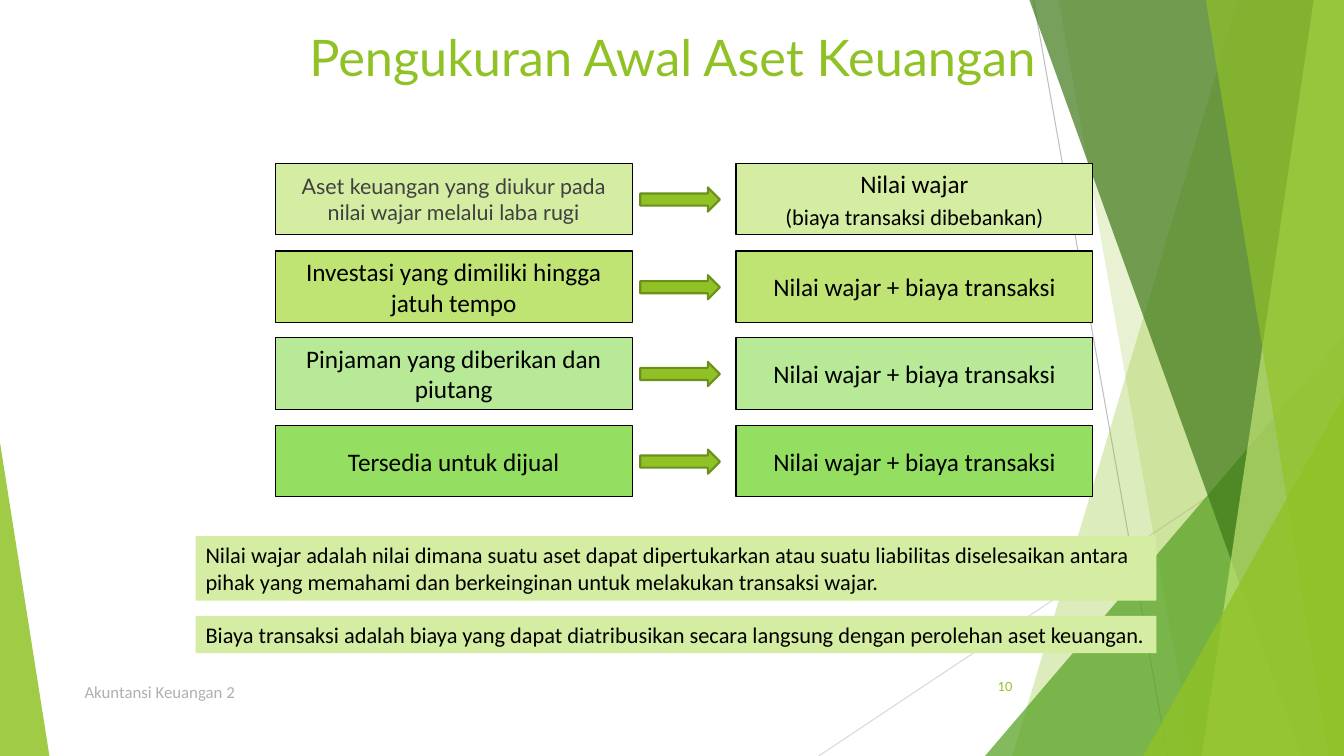
from pptx import Presentation
from pptx.dml.color import RGBColor
from pptx.enum.shapes import MSO_CONNECTOR as Connector, MSO_SHAPE as Shape
from pptx.enum.text import MSO_ANCHOR as Anchor, PP_ALIGN as Align
from pptx.oxml.ns import qn
from pptx.util import Pt
from lxml.etree import SubElement

PX = 9144
WIDTH, HEIGHT = 1333, 750

COLORS = {
    "green": "90C226", "leaf": "54A021", "forest": "3F7819", "lime": "C0E474",
    "pale": "D5EDA2", "mint": "B7E996", "bright": "94DE61", "olive": "6B901C",
    "black": "000000", "charcoal": "404040", "gray": "B0B0B0",
    "rule": "BFBFBF", "faint": "D9D9D9",
}

RULES = [((1025, 0), (1158, 750), "rule"), ((1333, 403), (812, 750), "faint")]
DECOR = [
    ("band", (1228, 1004), "green", 30),
    ("band", (1050, 1183), "green", 20),
    ("triangle", (977, 333, 356, 417, 1), "leaf", 72),
    ("band", (1021, 1291), "forest", 70),
    ("band", (1303, 1192), "lime", 70),
    ("band", (1196, 1318), "green", 65),
    ("triangle", (1134, 393, 199, 357, 1), "green", 80),
    ("triangle", (0, 439, 49, 311, 0), "green", 85),
]

STYLES = {
    "title": {"name": "Lato", "size": 36, "color": "green"},
    "lead": {"name": "Lato", "size": 15.3, "color": "charcoal"},
    "body": {"name": "Calibri", "size": 18, "color": "black"},
    "note": {"name": "Calibri", "size": 16, "color": "black"},
    "footer": {"name": "Calibri", "size": 12, "color": "gray"},
    "number": {"name": "Lato", "size": 9, "color": "green"},
}

WITH_COST = [("Nilai wajar + biaya transaksi", "body")]
ROWS = [
    ("pale", [("Aset keuangan yang diukur pada nilai wajar melalui laba rugi", "lead")],
     [("Nilai wajar", "body"), ("(biaya transaksi dibebankan)", "note")]),
    ("lime", [("Investasi yang dimiliki hingga jatuh tempo", "body")], WITH_COST),
    ("mint", [("Pinjaman yang diberikan dan piutang", "body")], WITH_COST),
    ("bright", [("Tersedia untuk dijual", "body")], WITH_COST),
]
NOTES = [
    (532, 64, "Nilai wajar adalah nilai dimana suatu aset dapat dipertukarkan atau suatu "
     "liabilitas diselesaikan antara pihak yang memahami dan berkeinginan untuk "
     "melakukan transaksi wajar."),
    (611, 37, "Biaya transaksi adalah biaya yang dapat diatribusikan secara langsung "
     "dengan perolehan aset keuangan."),
]
LABELS = [
    ((297, 21, 781, 105), "Pengukuran Awal Aset Keuangan", "title", Anchor.TOP, Align.LEFT),
    ((74, 661, 689, 40), "Akuntansi Keuangan 2", "footer", Anchor.BOTTOM, Align.LEFT),
    ((939, 661, 75, 40), "10", "number", Anchor.MIDDLE, Align.RIGHT),
]

ROW_TOP, ROW_SPAN, BOX_WIDTH, BOX_HEIGHT = 162, 260, 354, 71
ASSET_LEFT, ARROW_LEFT, VALUE_LEFT = 273, 635, 730
ARROW_WIDTH, ARROW_HEIGHT = 79, 24
NOTE_LEFT, NOTE_WIDTH = 194, 953


def emu(values):
    return [value * PX for value in values]


def rgb(name):
    return RGBColor.from_string(COLORS[name])


def paint(shape, fill, line=None, weight=0.75, alpha=100):
    shape.shadow.inherit = False
    shape.fill.solid()
    shape.fill.fore_color.rgb = rgb(fill)
    if alpha < 100:
        color = shape.fill._xPr.find(qn("a:solidFill"))[0]
        SubElement(color, qn("a:alpha")).set("val", str(alpha * 1000))
    if line:
        shape.line.color.rgb = rgb(line)
        shape.line.width = Pt(weight)
    else:
        shape.line.fill.background()


def write(shape, paragraphs, anchor, align, lead_space=0):
    frame = shape.text_frame
    frame.word_wrap = True
    frame.vertical_anchor = anchor
    for index, (text, style) in enumerate(paragraphs):
        para = frame.add_paragraph() if index else frame.paragraphs[0]
        para.alignment = align
        look = STYLES[style]
        para.space_before = Pt(look["size"] * lead_space)
        span = para.add_run()
        span.text = text
        for key, value in {"name": look["name"], "size": Pt(look["size"])}.items():
            setattr(span.font, key, value)
        span.font.color.rgb = rgb(look["color"])


def draw_decor(page):
    for start, end, color in RULES:
        rule = page.shapes.add_connector(Connector.STRAIGHT, *emu(start + end))
        rule.line.color.rgb = rgb(color)
        rule.line.width = Pt(0.75)
        SubElement(rule._element.spPr, qn("a:effectLst"))
    for kind, numbers, color, alpha in DECOR:
        if kind == "band":
            top_x, bottom_x = numbers
            outline = page.shapes.build_freeform(top_x, 0, scale=PX)
            outline.add_line_segments([(WIDTH, 0), (WIDTH, HEIGHT), (bottom_x, HEIGHT)])
            piece = outline.convert_to_shape()
        else:
            piece = page.shapes.add_shape(Shape.ISOSCELES_TRIANGLE, *emu(numbers[:4]))
            piece.adjustments[0] = numbers[4]
        paint(piece, color, alpha=alpha)


def draw_rows(page):
    for index, (color, asset, value) in enumerate(ROWS):
        top = ROW_TOP + round(index * ROW_SPAN / (len(ROWS) - 1))
        for left, paragraphs in ((ASSET_LEFT, asset), (VALUE_LEFT, value)):
            box = page.shapes.add_shape(
                Shape.RECTANGLE, *emu((left, top, BOX_WIDTH, BOX_HEIGHT)))
            paint(box, color, "black")
            write(box, paragraphs, Anchor.MIDDLE, Align.CENTER, 0.2)
        arrow_top = top + (BOX_HEIGHT - ARROW_HEIGHT + 1) // 2
        arrow = page.shapes.add_shape(
            Shape.RIGHT_ARROW, *emu((ARROW_LEFT, arrow_top, ARROW_WIDTH, ARROW_HEIGHT)))
        paint(arrow, "green", "olive", 1.5)


def draw_texts(page):
    for place, text, style, anchor, align in LABELS:
        label = page.shapes.add_textbox(*emu(place))
        write(label, [(text, style)], anchor, align)
    for top, height, text in NOTES:
        note = page.shapes.add_shape(
            Shape.RECTANGLE, *emu((NOTE_LEFT, top, NOTE_WIDTH, height)))
        paint(note, "pale")
        write(note, [(text, "note")], Anchor.TOP, Align.LEFT)


def main():
    deck = Presentation()
    deck.slide_width, deck.slide_height = emu((WIDTH, HEIGHT))
    page = deck.slides.add_slide(deck.slide_layouts[6])
    draw_decor(page)
    draw_rows(page)
    draw_texts(page)
    deck.save("out.pptx")


if __name__ == "__main__":
    main()
